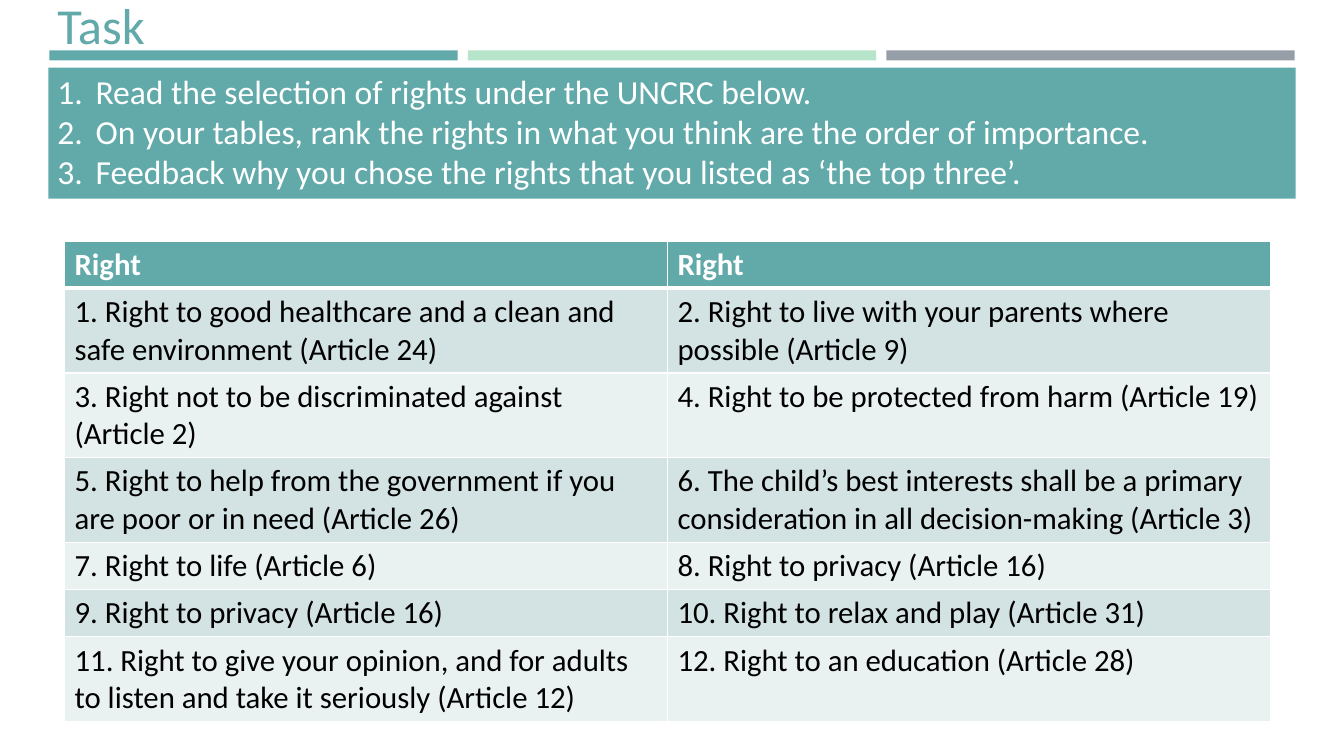
import lxml.etree
import pptx
import pptx.dml.color
import pptx.enum.shapes
import pptx.oxml.ns
import pptx.util

Inches = pptx.util.Inches
Pt = pptx.util.Pt
FONT = "Calibri"
COLORS = {"teal": "62A9AA", "mint": "B7E5CB", "grey": "969FA7", "white": "FFFFFF",
          "black": "000000", "band": "D3E2E2", "pale": "EAF1F1"}
TASKS = [
    "Read the selection of rights under the UNCRC below.",
    "On your tables, rank the rights in what you think are the order of importance.",
    "Feedback why you chose the rights that you listed as ‘the top three’.",
]
RIGHTS = [
    ("Right", "Right"),
    ("1. Right to good healthcare and a clean and safe environment (Article 24)",
     "2. Right to live with your parents where possible (Article 9)"),
    ("3. Right not to be discriminated against (Article 2)",
     "4. Right to be protected from harm (Article 19)"),
    ("5. Right to help from the government if you are poor or in need (Article 26)",
     "6. The child’s best interests shall be a primary consideration in all decision-making (Article 3)"),
    ("7. Right to life (Article 6)", "8. Right to privacy (Article 16)"),
    ("9. Right to privacy (Article 16)", "10. Right to relax and play (Article 31)"),
    ("11. Right to give your opinion, and for adults to listen and take it seriously (Article 12)",
     "12. Right to an education (Article 28)"),
]
ROW_HEIGHTS = [0.47, 0.84, 0.84, 0.84, 0.47, 0.47, 0.84]


def rgb(name):
    """Return the named palette colour."""
    return pptx.dml.color.RGBColor.from_string(COLORS[name])


def add_xml(parent, tag, **attributes):
    """Append a DrawingML element and return it."""
    return lxml.etree.SubElement(parent, pptx.oxml.ns.qn(tag), attributes)


def style(paragraph, size, color, bold=False):
    """Set the font of a whole paragraph."""
    font = paragraph.font
    font.name, font.size, font.bold = FONT, Pt(size), bold
    font.color.rgb = rgb(color)


def add_block(slide, left, top, width, height, color):
    """Draw a plain filled rectangle."""
    block = slide.shapes.add_shape(pptx.enum.shapes.MSO_SHAPE.RECTANGLE, Inches(left),
                                   Inches(top), Inches(width), Inches(height))
    block.shadow.inherit = False
    block.fill.solid()
    block.fill.fore_color.rgb = rgb(color)
    block.line.fill.background()


def add_text(slide, left, top, width, height, lines, size, color):
    """Place wrapped text and return its paragraphs."""
    frame = slide.shapes.add_textbox(Inches(left), Inches(top), Inches(width),
                                     Inches(height)).text_frame
    frame.word_wrap = True
    frame.text = "\n".join(lines)
    for paragraph in frame.paragraphs:
        style(paragraph, size, color)
    return frame.paragraphs


def add_heading(slide, left, top, width):
    """Place the title above three evenly spaced colour bars."""
    gap = 0.1
    bar_width = (width - 2 * gap) / 3
    for i, color in enumerate(["teal", "mint", "grey"]):
        add_block(slide, left + i * (bar_width + gap), top + 0.61, bar_width, 0.1, color)
    add_text(slide, left - 0.02, top, 7.8, 0.71, ["Task"], 36, "teal")


def add_tasks(slide, left, top, width, height):
    """Place the numbered instructions on a teal panel."""
    add_block(slide, left, top, width, height, "teal")
    for task in add_text(slide, left - 0.01, top - 0.02, 11.67, height, TASKS, 24, "white"):
        properties = task._p.get_or_add_pPr()
        properties.set("marL", str(Inches(0.38)))
        properties.set("indent", str(-Inches(0.38)))
        add_xml(properties, "a:buFont", typeface="+mj-lt")
        add_xml(properties, "a:buAutoNum", type="arabicPeriod")


def add_borders(cell, bottom):
    """Give a cell white borders with the given bottom width in points."""
    properties = cell._tc.get_or_add_tcPr()
    for side, width in (("L", 1), ("R", 1), ("T", 1), ("B", bottom)):
        line = add_xml(properties, "a:ln" + side, w=str(Pt(width)))
        add_xml(add_xml(line, "a:solidFill"), "a:srgbClr", val=COLORS["white"])


def add_rights(slide, left, top, width):
    """Place the banded two-column table of rights."""
    table = slide.shapes.add_table(len(RIGHTS), 2, Inches(left), Inches(top), Inches(width),
                                   Inches(sum(ROW_HEIGHTS))).table
    for r, rights in enumerate(RIGHTS):
        table.rows[r].height = Inches(ROW_HEIGHTS[r])
        header = r == 0
        for c, right in enumerate(rights):
            cell = table.cell(r, c)
            cell.text = right
            style(cell.text_frame.paragraphs[0], 22, "white" if header else "black", header)
            add_borders(cell, 3 if header else 1)
            cell.fill.solid()
            cell.fill.fore_color.rgb = rgb("teal" if header else "band" if r % 2 else "pale")


def main():
    """Build and save the task slide."""
    deck = pptx.Presentation()
    deck.slide_width, deck.slide_height = Inches(13.33), Inches(7.5)
    slide = deck.slides.add_slide(deck.slide_layouts[6])
    add_heading(slide, 0.49, -0.11, 12.35)
    add_tasks(slide, 0.48, 0.67, 12.37, 1.3)
    add_rights(slide, 0.64, 2.39, 11.96)
    deck.save("out.pptx")


if __name__ == "__main__":
    main()
